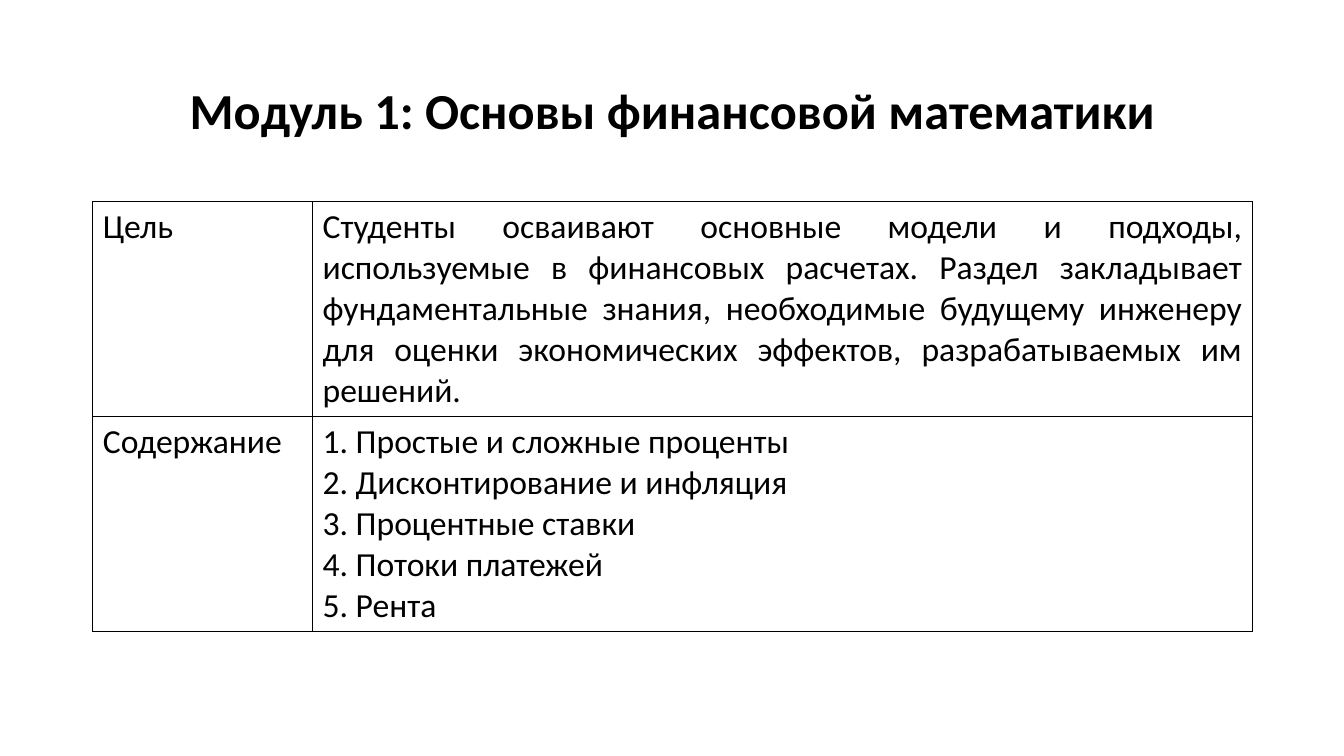
from lxml.etree import SubElement
from pptx import Presentation
from pptx.dml.color import RGBColor
from pptx.enum.text import MSO_ANCHOR, PP_ALIGN as Align
from pptx.oxml.ns import qn
from pptx.util import Inches, Pt

BLACK = RGBColor(0x00, 0x00, 0x00)
FONT = "Calibri"
LEFT, WIDTH = Inches(0.92), Inches(11.5)
COLUMN_WIDTHS = (2.18, 9.32)
ROW_HEIGHT = 2.13

TITLE = "Модуль 1: Основы финансовой математики"
GOAL = (
    "Студенты осваивают основные модели и подходы, используемые в финансовых "
    "расчетах. Раздел закладывает фундаментальные знания, необходимые будущему "
    "инженеру для оценки экономических эффектов, разрабатываемых им решений."
)
TOPICS = (
    "1. Простые и сложные проценты",
    "2. Дисконтирование и инфляция",
    "3. Процентные ставки",
    "4. Потоки платежей",
    "5. Рента",
)
ROWS = (("Цель", GOAL), ("Содержание", "\n".join(TOPICS)))


def write_text(text_frame, text, size=24, bold=False, align=Align.LEFT, spacing=1.0):
    """Fill a text frame, one paragraph per line of text."""
    text_frame.text = text
    for paragraph in text_frame.paragraphs:
        paragraph.alignment = align
        paragraph.line_spacing = spacing
        for run in paragraph.runs:
            run.font.name = FONT
            run.font.size = Pt(size)
            run.font.bold = bold
            run.font.color.rgb = BLACK


def add_borders(cell, width=1):
    """Draw a solid line on all four sides of a cell."""
    properties = cell._tc.get_or_add_tcPr()
    for position, side in enumerate(("a:lnL", "a:lnR", "a:lnT", "a:lnB")):
        line = properties.makeelement(qn(side), {"w": str(Pt(width))})
        fill = SubElement(line, qn("a:solidFill"))
        SubElement(fill, qn("a:srgbClr"), val=str(BLACK))
        properties.insert(position, line)


def add_title(slide):
    title = slide.shapes.title
    title.left, title.top = LEFT, Inches(0.4)
    title.width, title.height = WIDTH, Inches(1.45)
    title.text_frame.vertical_anchor = MSO_ANCHOR.MIDDLE
    write_text(title.text_frame, TITLE, size=36, bold=True,
               align=Align.CENTER, spacing=0.9)


def add_module_table(slide):
    table = slide.shapes.add_table(
        len(ROWS), len(COLUMN_WIDTHS), LEFT, Inches(2), WIDTH,
        Inches(ROW_HEIGHT * len(ROWS))).table
    table.first_row = table.horz_banding = False
    for column, width in zip(table.columns, COLUMN_WIDTHS):
        column.width = Inches(width)
    for row, texts in zip(table.rows, ROWS):
        row.height = Inches(ROW_HEIGHT)
        for cell, text, align in zip(row.cells, texts, (Align.LEFT, Align.JUSTIFY)):
            write_text(cell.text_frame, text, align=align)
            cell.fill.background()
            add_borders(cell)


def main():
    presentation = Presentation()
    presentation.slide_width = Inches(13.33)
    presentation.slide_height = Inches(7.5)
    # Layout 5 holds a title only
    slide = presentation.slides.add_slide(presentation.slide_layouts[5])
    add_title(slide)
    add_module_table(slide)
    presentation.save("out.pptx")


if __name__ == "__main__":
    main()
